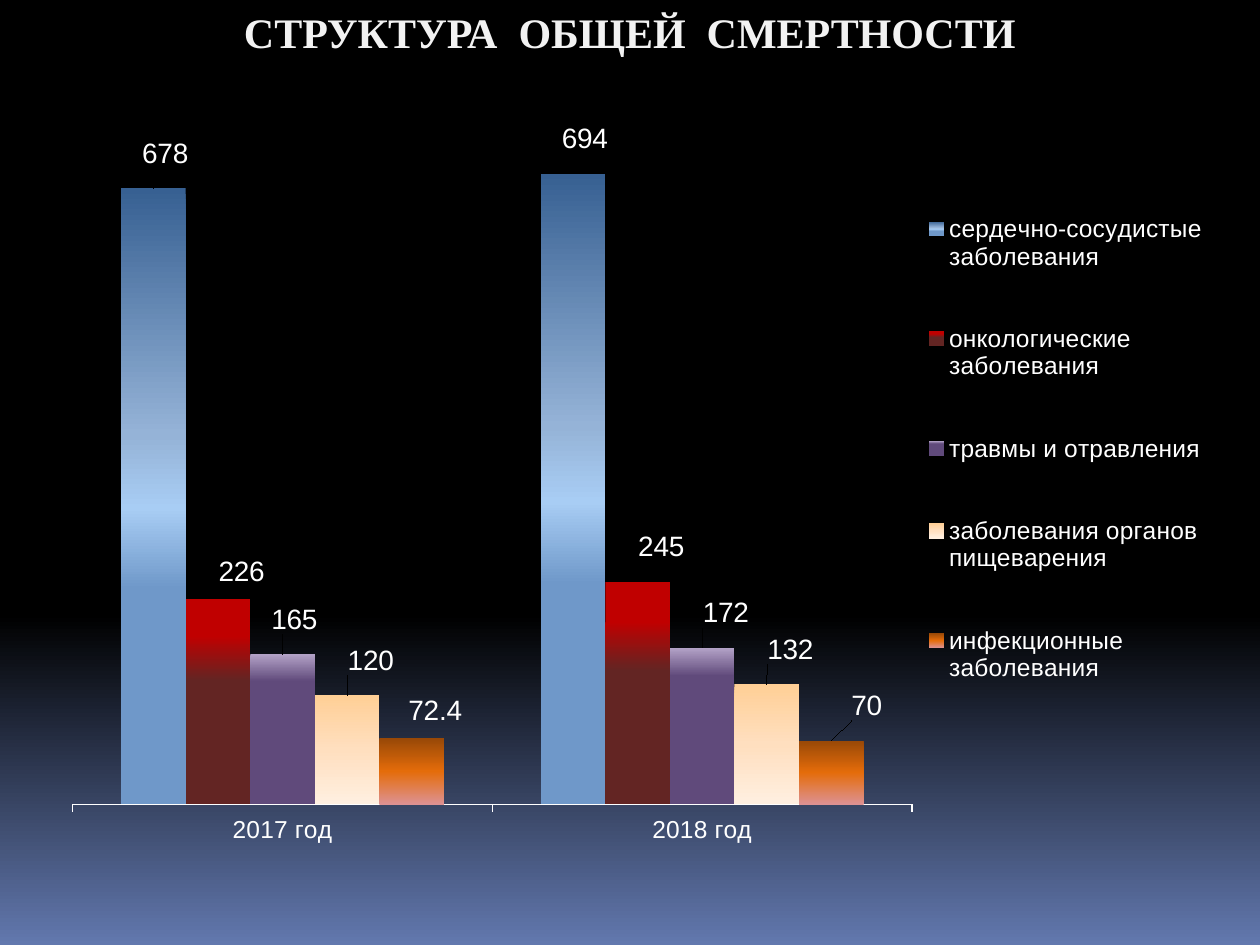
from lxml.etree import SubElement
from pptx import Presentation
from pptx.chart.data import CategoryChartData
from pptx.dml.color import RGBColor
from pptx.enum.chart import (XL_CHART_TYPE, XL_LABEL_POSITION, XL_LEGEND_POSITION,
                             XL_TICK_LABEL_POSITION, XL_TICK_MARK)
from pptx.enum.text import MSO_ANCHOR, PP_ALIGN
from pptx.oxml import parse_xml
from pptx.oxml.ns import nsdecls, qn
from pptx.util import Cm, Pt

COLORS = {"title": "F2F2F2", "text": "FFFFFF"}
BACKGROUND = [(0, "000000"), (65, "000000"), (100, "6278AE")]
YEARS = ["2017 год", "2018 год"]
# Name, values, gradient stops, label offsets as shares of the chart size
CAUSES = [
    ("сердечно-сосудистые заболевания", (678, 694),
     [(0, "376092"), (40, "95B3D7"), (52, "A8CDF4"), (65, "6F98C9")],
     [(0.01, -0.02), (0.01, -0.02)]),
    ("онкологические заболевания", (226, 245),
     [(0, "C00000"), (18, "C00000"), (40, "632523"), (52, "632523")],
     [(0.02, -0.01), (0.02, -0.02)]),
    ("травмы и отравления", (165, 172),
     [(0, "B3A2C7"), (18, "604A7B"), (52, "604A7B")],
     [(0.01, -0.02), (0.02, -0.02)]),
    ("заболевания органов пищеварения", (120, 132),
     [(0, "FFCF96"), (50, "FFDFBF"), (100, "FFEFE0")],
     [(0.02, -0.02), (0.02, -0.02)]),
    ("инфекционные заболевания", (72.4, 70),
     [(0, "984807"), (50, "E46C0A"), (100, "DD9191")],
     [(0.02, -0.01), (0.03, -0.02)]),
]


def set_font(font, size, color, name="Arial", bold=False):
    font.name, font.size, font.bold = name, Pt(size), bold
    font.color.rgb = RGBColor.from_string(COLORS[color])


def fill_gradient(fill, element, stops):
    """Fill from top to bottom; element is the XML that holds the fill."""
    fill.gradient()
    fill.gradient_angle = 270
    gs_list = next(element.iter(qn("a:gsLst")))
    for gs in list(gs_list):
        gs_list.remove(gs)
    for percent, color in stops:
        gs = SubElement(gs_list, qn("a:gs"), pos=str(percent * 1000))
        SubElement(gs, qn("a:srgbClr"), val=color)


def set_layout(before, **values):
    """Put a manual layout after the given chart element."""
    parent = before.getparent()
    for old in parent.findall(qn("c:layout")):
        parent.remove(old)
    layout = parse_xml(f"<c:layout {nsdecls('c')}><c:manualLayout/></c:layout>")
    for tag, value in values.items():
        SubElement(layout[0], qn(f"c:{tag}"), val=str(value))
    before.addnext(layout)


def add_title(slide, text):
    tf = slide.shapes.add_textbox(0, 0, Cm(25.4), Cm(2.77)).text_frame
    tf.word_wrap = True
    tf.vertical_anchor = MSO_ANCHOR.TOP
    p = tf.paragraphs[0]
    p.text = text
    p.alignment = PP_ALIGN.CENTER
    set_font(p.font, 24, "title", "Times New Roman", True)


def style_axes(chart):
    axis = chart.category_axis
    axis.major_tick_mark = XL_TICK_MARK.OUTSIDE
    axis.format.line.color.rgb = RGBColor.from_string(COLORS["text"])
    set_font(axis.tick_labels.font, 14, "text")

    axis = chart.value_axis
    axis.minimum_scale, axis.maximum_scale, axis.major_unit = 0, 750, 0.5
    axis.has_major_gridlines = False
    axis.tick_label_position = XL_TICK_LABEL_POSITION.NONE
    axis.format.line.fill.background()


def style_series(series, stops, offsets):
    element = series.format.fill
    fill_gradient(element, series._element, stops)
    labels = series.data_labels
    labels.show_value = True
    labels.position = XL_LABEL_POSITION.OUTSIDE_END
    set_font(labels.font, 16, "text")
    for i, (dx, dy) in enumerate(offsets):
        label = series.points[i].data_label
        set_font(label.font, 16, "text")
        label.position = XL_LABEL_POSITION.OUTSIDE_END
    for d_lbl, (dx, dy) in zip(series._element.iter(qn("c:dLbl")), offsets):
        set_layout(d_lbl.find(qn("c:idx")), x=dx, y=dy)


def add_mortality_chart(slide):
    data = CategoryChartData()
    data.categories = YEARS
    for name, values, *_ in CAUSES:
        data.add_series(name, values)
    chart = slide.shapes.add_chart(XL_CHART_TYPE.COLUMN_CLUSTERED, Cm(0.99), Cm(2.18),
                                   Cm(23.83), Cm(15.09), data).chart
    chart.has_title = False
    set_font(chart.font, 18, "text", "Calibri")
    plot = chart.plots[0]
    plot.gap_width, plot.overlap, plot.vary_by_categories = 150, 0, False
    style_axes(chart)
    for series, (_, _, stops, offsets) in zip(plot.series, CAUSES):
        style_series(series, stops, offsets)

    chart.has_legend = True
    legend = chart.legend
    legend.position = XL_LEGEND_POSITION.RIGHT
    legend.include_in_layout = False
    set_font(legend.font, 14, "text")
    set_layout(legend._element.find(qn("c:legendPos")), xMode="edge", yMode="edge",
               x=0.73, y=0.07, w=0.26, h=0.77)

    plot_area = next(chart._chartSpace.iter(qn("c:plotArea")))
    for old in plot_area.findall(qn("c:layout")):
        plot_area.remove(old)
    bars = plot_area.find(qn("c:barChart"))
    set_layout(bars, layoutTarget="inner", xMode="edge", yMode="edge",
               x=0.02, y=0.02, w=0.71, h=0.91)
    plot_area.insert(0, plot_area.find(qn("c:layout")))


def main():
    prs = Presentation()
    prs.slide_width, prs.slide_height = Cm(25.4), Cm(19.05)
    slide = prs.slides.add_slide(prs.slide_layouts[6])
    fill_gradient(slide.background.fill, slide._element, BACKGROUND)
    add_title(slide, "СТРУКТУРА  ОБЩЕЙ  СМЕРТНОСТИ")
    add_mortality_chart(slide)
    prs.save("out.pptx")


if __name__ == "__main__":
    main()
